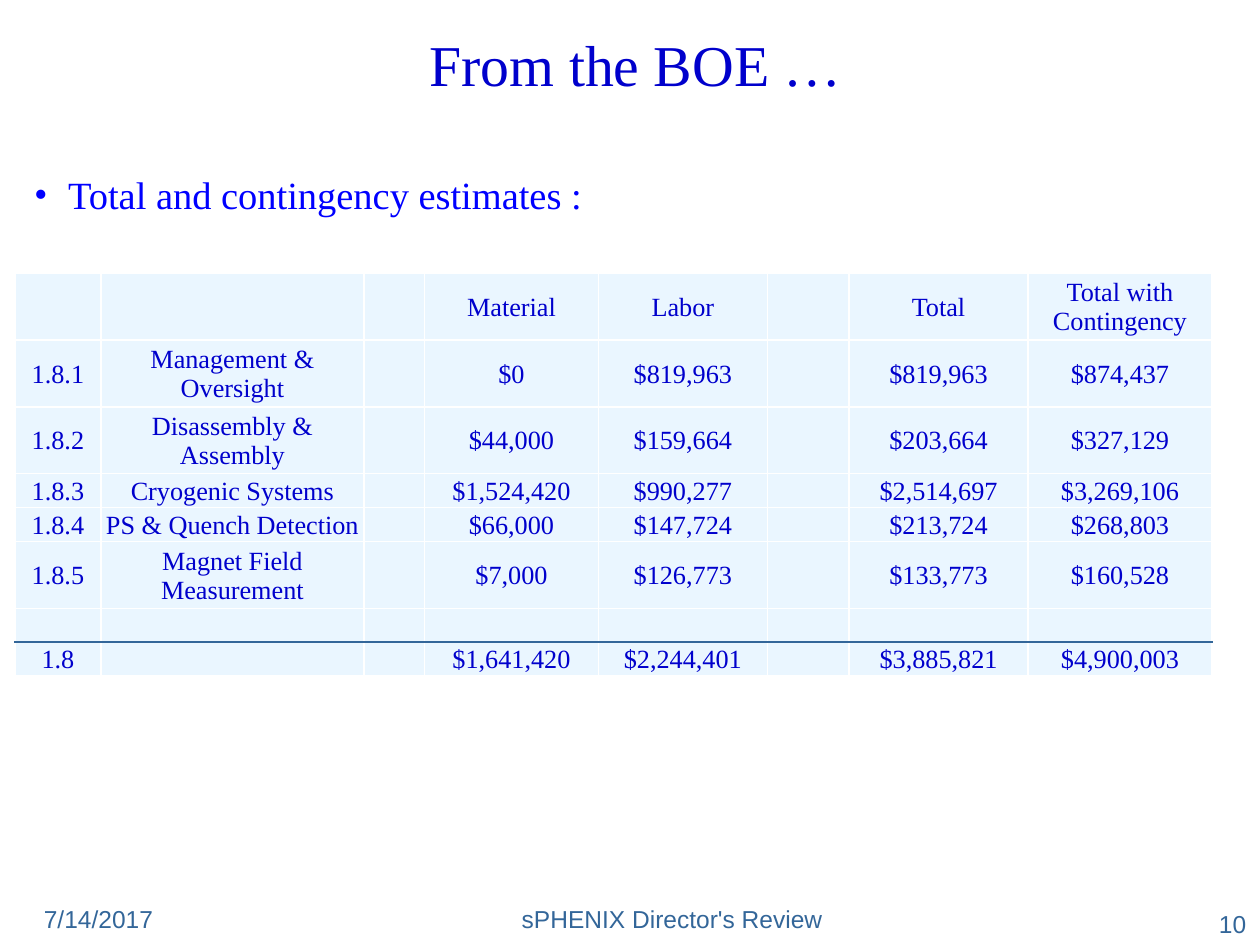
from lxml import etree
from pptx import Presentation
from pptx import util as u
from pptx.dml.color import RGBColor
from pptx.enum import text
from pptx.oxml import ns

NAVY = RGBColor(0x00, 0x00, 0xCC)
BLUE = RGBColor(0x00, 0x00, 0xFF)
STEEL = RGBColor(0x33, 0x66, 0x99)
PALE = RGBColor(0xEA, 0xF6, 0xFF)
WHITE = RGBColor(0xFF, 0xFF, 0xFF)

SERIF = "Times New Roman"
SANS = "Arial"
LEFT, CENTER, RIGHT = text.PP_ALIGN.LEFT, text.PP_ALIGN.CENTER, text.PP_ALIGN.RIGHT

COLUMNS = [0.68, 2.09, 0.48, 1.38, 1.34, 0.65, 1.42, 1.46]
ROWS = [0.53, 0.53, 0.53, 0.27, 0.27, 0.53, 0.26, 0.26]
ESTIMATES = [
    ["", "", "", "Material", "Labor", "", "Total", "Total with Contingency"],
    ["1.8.1", "Management & Oversight", "", "$0", "$819,963", "", "$819,963", "$874,437"],
    ["1.8.2", "Disassembly & Assembly", "", "$44,000", "$159,664", "", "$203,664", "$327,129"],
    ["1.8.3", "Cryogenic Systems", "", "$1,524,420", "$990,277", "", "$2,514,697", "$3,269,106"],
    ["1.8.4", "PS & Quench Detection", "", "$66,000", "$147,724", "", "$213,724", "$268,803"],
    ["1.8.5", "Magnet Field Measurement", "", "$7,000", "$126,773", "", "$133,773", "$160,528"],
    [""] * 8,
    ["1.8", "", "", "$1,641,420", "$2,244,401", "", "$3,885,821", "$4,900,003"],
]


def write(paragraph, words, size, color, font=SERIF, align=CENTER, spacing=1.0):
    """Put formatted words in a paragraph."""
    paragraph.alignment = align
    paragraph.space_before = u.Pt(0)
    paragraph.line_spacing = spacing
    if not words:
        etree.SubElement(paragraph._p, ns.qn("a:endParaRPr"), sz=str(size * 100))
        return
    run = paragraph.add_run()
    run.text = words
    run.font.size = u.Pt(size)
    run.font.name = font
    run.font.color.rgb = color


def prepare_frame(shape, left, top, width, height):
    """Place a text shape and return its first paragraph."""
    shape.left, shape.top = u.Inches(left), u.Inches(top)
    shape.width, shape.height = u.Inches(width), u.Inches(height)
    frame = shape.text_frame
    frame.word_wrap = True
    frame.auto_size = text.MSO_AUTO_SIZE.NONE
    frame.vertical_anchor = text.MSO_ANCHOR.MIDDLE
    return frame.paragraphs[0]


def add_bullet(paragraph, indent):
    """Give a paragraph a round bullet with a hanging indent."""
    properties = paragraph._p.get_or_add_pPr()
    properties.set("marL", str(u.Inches(indent)))
    properties.set("indent", str(-u.Inches(indent)))
    etree.SubElement(properties, ns.qn("a:buFont"), typeface=SERIF)
    etree.SubElement(properties, ns.qn("a:buChar"), char="•")


def add_footer(slide, words, box, align):
    """Add one footer text."""
    shape = slide.shapes.add_textbox(0, 0, 0, 0)
    write(prepare_frame(shape, *box), words, 14, STEEL, font=SANS, align=align)


def set_borders(cell, top, bottom):
    """Draw one-point borders, white at the sides."""
    properties = cell._tc.get_or_add_tcPr()
    for side, color in (("L", WHITE), ("R", WHITE), ("T", top), ("B", bottom)):
        line = etree.SubElement(properties, ns.qn(f"a:ln{side}"), w=str(u.Pt(1)))
        fill = etree.SubElement(line, ns.qn("a:solidFill"))
        etree.SubElement(fill, ns.qn("a:srgbClr"), val=str(color))


def format_cell(cell, words, top, bottom):
    """Fill, border and write one table cell."""
    set_borders(cell, top, bottom)
    cell.fill.solid()
    cell.fill.fore_color.rgb = PALE
    cell.margin_left = cell.margin_right = cell.margin_top = u.Inches(0.01)
    cell.margin_bottom = 0
    cell.vertical_anchor = text.MSO_ANCHOR.MIDDLE
    write(cell.text_frame.paragraphs[0], words, 15, NAVY)


def add_estimates(slide):
    """Add the cost table with a rule above its total row."""
    table = slide.shapes.add_table(
        len(ROWS), len(COLUMNS), u.Inches(0.12), u.Inches(2.17),
        u.Inches(sum(COLUMNS)), u.Inches(sum(ROWS))).table
    table.first_row = table.horz_banding = False
    for column, width in zip(table.columns, COLUMNS):
        column.width = u.Inches(width)
    total = len(ROWS) - 1
    for index, (row, height) in enumerate(zip(table.rows, ROWS)):
        row.height = u.Inches(height)
        top = STEEL if index == total else WHITE
        bottom = STEEL if index == total - 1 else WHITE
        for cell, words in zip(row.cells, ESTIMATES[index]):
            format_cell(cell, words, top, bottom)


def main():
    """Build and save the slide."""
    presentation = Presentation()
    presentation.slide_width, presentation.slide_height = u.Inches(10), u.Inches(7.5)
    slide = presentation.slides.add_slide(presentation.slide_layouts[1])
    title = prepare_frame(slide.shapes.title, 0.17, 0.14, 9.75, 0.73)
    write(title, "From the BOE …", 33, NAVY)
    body = prepare_frame(slide.placeholders[1], 0.17, 1.27, 9.75, 0.6)
    add_bullet(body, 0.27)
    write(body, "Total and contingency estimates :", 22, BLUE, align=LEFT, spacing=0.85)
    add_estimates(slide)
    add_footer(slide, "10", (7.91, 7.17, 2.08, 0.33), RIGHT)
    add_footer(slide, "7/14/2017", (0.25, 7.08, 3.17, 0.42), LEFT)
    add_footer(slide, "sPHENIX Director's Review", (3.75, 7.08, 3.17, 0.42), CENTER)
    presentation.save("out.pptx")


if __name__ == "__main__":
    main()
